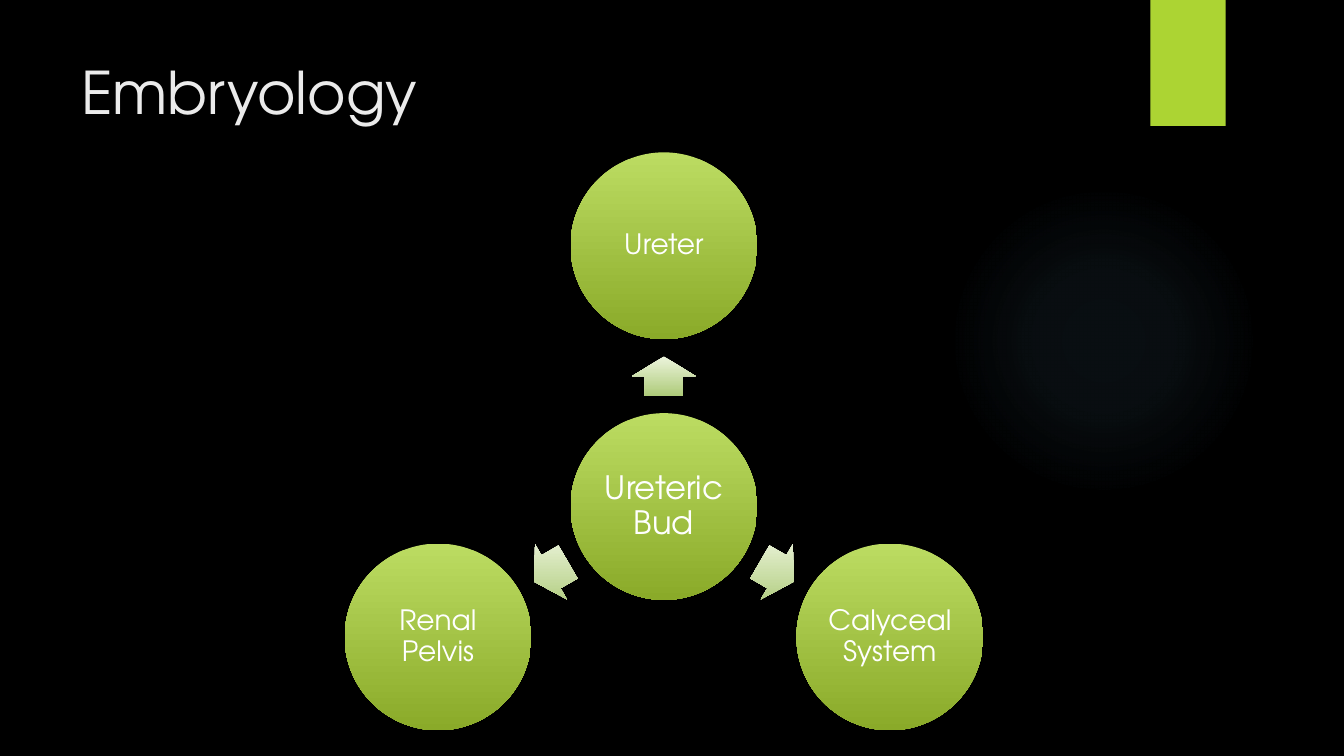
from math import cos, radians, sin

from lxml import etree
from pptx import Presentation
from pptx.dml.color import RGBColor
from pptx.enum.shapes import MSO_SHAPE
from pptx.enum.text import MSO_ANCHOR, PP_ALIGN
from pptx.oxml import parse_xml
from pptx.oxml.ns import nsdecls, qn
from pptx.util import Inches, Pt

COLORS = {
    "background": "000000", "title": "EBEBEB", "label": "FFFFFF",
    "tab": "ACD433", "glow": "7AC4F0",
    "circle top": "BCDC62", "circle bottom": "8AAA29",
    "arrow top": "ECF4DC", "arrow bottom": "AECB7A",
}
FONT = "TeX Gyre Adventor"
DOWNWARD = '<a:lin ang="5400000" scaled="0"/>'
OUTWARD = ('<a:path path="circle">'
           '<a:fillToRect l="50000" t="50000" r="50000" b="50000"/></a:path>')

deck = Presentation()
deck.slide_width, deck.slide_height = Inches(13.33), Inches(7.5)
col, row = deck.slide_width / 100, deck.slide_height / 100
slide = deck.slides.add_slide(deck.slide_layouts[6])
slide.background.fill.solid()
slide.background.fill.fore_color.rgb = RGBColor.from_string(COLORS["background"])


def add_centred(kind, x, y, width, height):
    """Add a plain shape around the point x, y."""
    shape = slide.shapes.add_shape(kind, int(x - width / 2), int(y - height / 2),
                                   int(width), int(height))
    shape.shadow.inherit = False
    shape.line.fill.background()
    return shape


def set_gradient(shape, stops, direction):
    """Fill with stops of (position %, colour name, opacity %), upright under rotation."""
    shape.fill.background()
    properties = shape._element.spPr
    gradient = parse_xml(f'<a:gradFill {nsdecls("a")} rotWithShape="0"><a:gsLst/>'
                         f'{direction}</a:gradFill>')
    for position, name, opacity in stops:
        stop = etree.SubElement(gradient[0], qn("a:gs"), pos=str(position * 1000))
        color = etree.SubElement(stop, qn("a:srgbClr"), val=COLORS[name])
        if opacity < 100:
            etree.SubElement(color, qn("a:alpha"), val=str(opacity * 1000))
    properties.replace(properties.find(qn("a:noFill")), gradient)


# Backdrop
glow = add_centred(MSO_SHAPE.OVAL, 82.1 * col, 45 * row, 41 * row, 41 * row)
set_gradient(glow, [(0, "glow", 7), (36, "glow", 6), (69, "glow", 0)], OUTWARD)

tab_height = 16.67 * row
tab = add_centred(MSO_SHAPE.RECTANGLE, 88.4 * col, tab_height / 2, 5.6 * col, tab_height)
tab.fill.solid()
tab.fill.fore_color.rgb = RGBColor.from_string(COLORS["tab"])

# Title
title = slide.shapes.add_textbox(int(5.3 * col), int(6.67 * row),
                                 int(77.2 * col), int(20.4 * row)).text_frame
title.word_wrap = True
heading = title.paragraphs[0]
heading.text = "Embryology"
heading.font.name, heading.font.size = FONT, Pt(42)
heading.font.color.rgb = RGBColor.from_string(COLORS["title"])

# Ureteric bud with the structures it gives rise to: label, size, direction
bud_x, bud_y = 49.4 * col, 67 * row
orbit, diameter = 34.5 * row, 24.7 * row
structures = [("Ureteric Bud", 23, None), ("Ureter", 20, 270),
              ("Calyceal System", 20, 30), ("Renal Pelvis", 20, 150)]

for label, size, angle in structures:
    x, y = bud_x, bud_y
    if angle is not None:
        reach_x, reach_y = orbit * cos(radians(angle)), orbit * sin(radians(angle))
        x, y = bud_x + reach_x, bud_y + reach_y
        arrow = add_centred(MSO_SHAPE.RIGHT_ARROW, bud_x + reach_x / 2,
                            bud_y + reach_y / 2, 5.2 * row, 8.4 * row)
        arrow.rotation = angle
        arrow.adjustments[0], arrow.adjustments[1] = 0.6, 0.5
        set_gradient(arrow, [(0, "arrow top", 100), (100, "arrow bottom", 100)], DOWNWARD)

    circle = add_centred(MSO_SHAPE.OVAL, x, y, diameter, diameter)
    set_gradient(circle, [(0, "circle top", 100), (100, "circle bottom", 100)], DOWNWARD)
    frame = circle.text_frame
    frame.word_wrap = True
    frame.vertical_anchor = MSO_ANCHOR.MIDDLE
    frame.margin_left = frame.margin_right = Inches(0.03)
    frame.margin_top = frame.margin_bottom = Inches(0.03)
    caption = frame.paragraphs[0]
    caption.text = label
    caption.alignment = PP_ALIGN.CENTER
    caption.line_spacing = 0.9
    caption.font.name, caption.font.size = FONT, Pt(size)
    caption.font.color.rgb = RGBColor.from_string(COLORS["label"])

deck.save("out.pptx")
